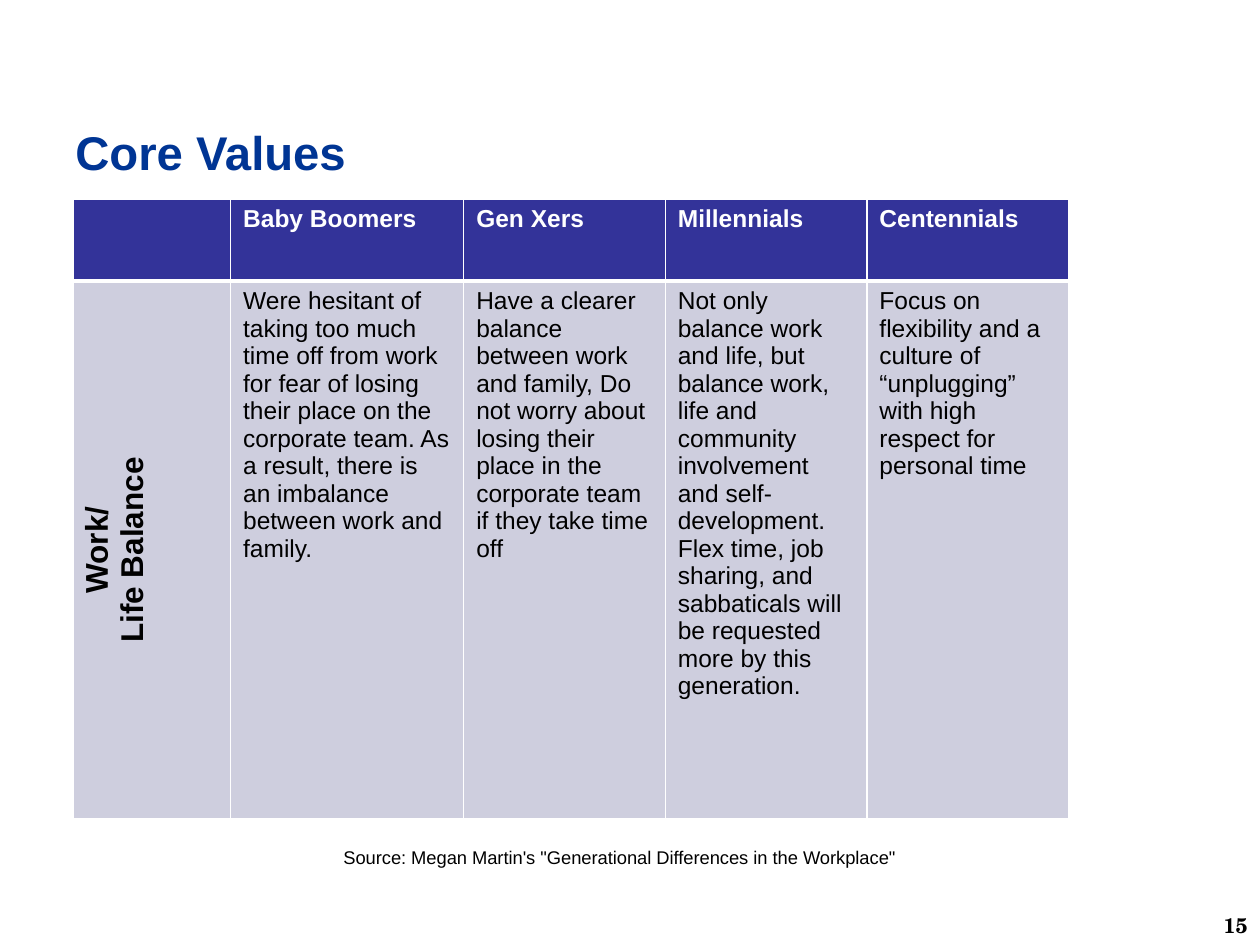
from dataclasses import dataclass

from lxml.etree import SubElement
from pptx import Presentation
from pptx.dml.color import RGBColor
from pptx.enum.text import MSO_ANCHOR, PP_ALIGN
from pptx.oxml.ns import qn
from pptx.util import Inches, Pt


@dataclass(frozen=True)
class Theme:
    sans: str = "Arial"
    serif: str = "TeX Gyre Schola"
    title: str = "003594"
    header: str = "333399"
    body: str = "CECEDE"
    light: str = "FFFFFF"
    dark: str = "000000"
    title_size: float = 27
    label_size: float = 18
    cell_size: float = 14
    number_size: float = 12
    source_size: float = 10.5
    thin: float = 1
    thick: float = 3


THEME = Theme()
COLUMNS = (1.25, 1.85, 1.6, 1.6, 1.6)
ROWS = (0.65, 4.27)
HEADINGS = ("", "Baby Boomers", "Gen Xers", "Millennials", "Centennials")
ROW_LABEL = ("Work/", "Life Balance")
VALUES = (
    "Were hesitant of taking too much time off from work for fear of losing "
    "their place on the corporate team. As a result, there is an imbalance "
    "between work and family.",
    "Have a clearer balance between work and family, Do not worry about "
    "losing their place in the corporate team if they take time off",
    "Not only balance work and life, but balance work, life and community "
    "involvement and self-development. Flex time, job sharing, and "
    "sabbaticals will be requested more by this generation.",
    "Focus on flexibility and a culture of “unplugging” with high respect "
    "for personal time",
)


def write(frame, lines, size, color, bold=False, font=THEME.sans,
          align=PP_ALIGN.LEFT):
    """Fill a text frame with one paragraph per line."""
    for index, line in enumerate(lines):
        para = frame.add_paragraph() if index else frame.paragraphs[0]
        para.alignment = align
        span = para.add_run()
        span.text = line
        span.font.name = font
        span.font.size = Pt(size)
        span.font.bold = bold
        span.font.color.rgb = RGBColor.from_string(color)


def add_text(page, place, text, size, color, anchor=MSO_ANCHOR.TOP, **style):
    box = page.shapes.add_textbox(*map(Inches, place))
    box.text_frame.word_wrap = True
    box.text_frame.vertical_anchor = anchor
    write(box.text_frame, [text], size, color, **style)


def style_cell(cell, fill, top, bottom):
    """Give a cell white borders, then its fill."""
    properties = cell._tc.get_or_add_tcPr()
    widths = {"a:lnL": THEME.thin, "a:lnR": THEME.thin,
              "a:lnT": top, "a:lnB": bottom}
    for tag, width in widths.items():
        line = SubElement(properties, qn(tag), w=str(Pt(width)))
        solid = SubElement(line, qn("a:solidFill"))
        SubElement(solid, qn("a:srgbClr"), val=THEME.light)
    cell.fill.solid()
    cell.fill.fore_color.rgb = RGBColor.from_string(fill)


def add_values_table(page, left, top):
    place = (left, top, sum(COLUMNS), sum(ROWS))
    table = page.shapes.add_table(
        len(ROWS), len(COLUMNS), *map(Inches, place)).table
    for column, width in zip(table.columns, COLUMNS):
        column.width = Inches(width)
    for row, height in zip(table.rows, ROWS):
        row.height = Inches(height)

    # Header row
    for cell, heading in zip(table.rows[0].cells, HEADINGS):
        style_cell(cell, THEME.header, THEME.thin, THEME.thick)
        if heading:
            write(cell.text_frame, [heading], THEME.cell_size, THEME.light,
                  bold=True)

    # Body row, led by a label that reads upwards
    label, *value_cells = table.rows[1].cells
    style_cell(label, THEME.body, THEME.thick, THEME.thin)
    label._tc.get_or_add_tcPr().set("vert", "vert270")
    write(label.text_frame, ROW_LABEL, THEME.label_size, THEME.dark,
          bold=True, align=PP_ALIGN.CENTER)
    for cell, value in zip(value_cells, VALUES):
        style_cell(cell, THEME.body, THEME.thick, THEME.thin)
        write(cell.text_frame, [value], THEME.cell_size, THEME.dark)


def main():
    deck = Presentation()
    deck.slide_width, deck.slide_height = Inches(10), Inches(7.5)
    page = deck.slides.add_slide(deck.slide_layouts[6])

    # Title
    add_text(page, (0.5, 0.83, 9, 0.75), "Core Values", THEME.title_size,
             THEME.title, anchor=MSO_ANCHOR.MIDDLE, bold=True)

    # Values by generation
    add_values_table(page, 0.58, 1.58)

    # Source and page number
    add_text(page, (2.42, 6.67, 5, 0.28),
             "Source: Megan Martin's \"Generational Differences in the "
             "Workplace\"",
             THEME.source_size, THEME.dark, align=PP_ALIGN.CENTER)
    add_text(page, (8.89, 7.24, 1.11, 0.21), "15", THEME.number_size,
             THEME.dark, anchor=MSO_ANCHOR.MIDDLE, bold=True,
             font=THEME.serif, align=PP_ALIGN.RIGHT)

    deck.save("out.pptx")


if __name__ == "__main__":
    main()
